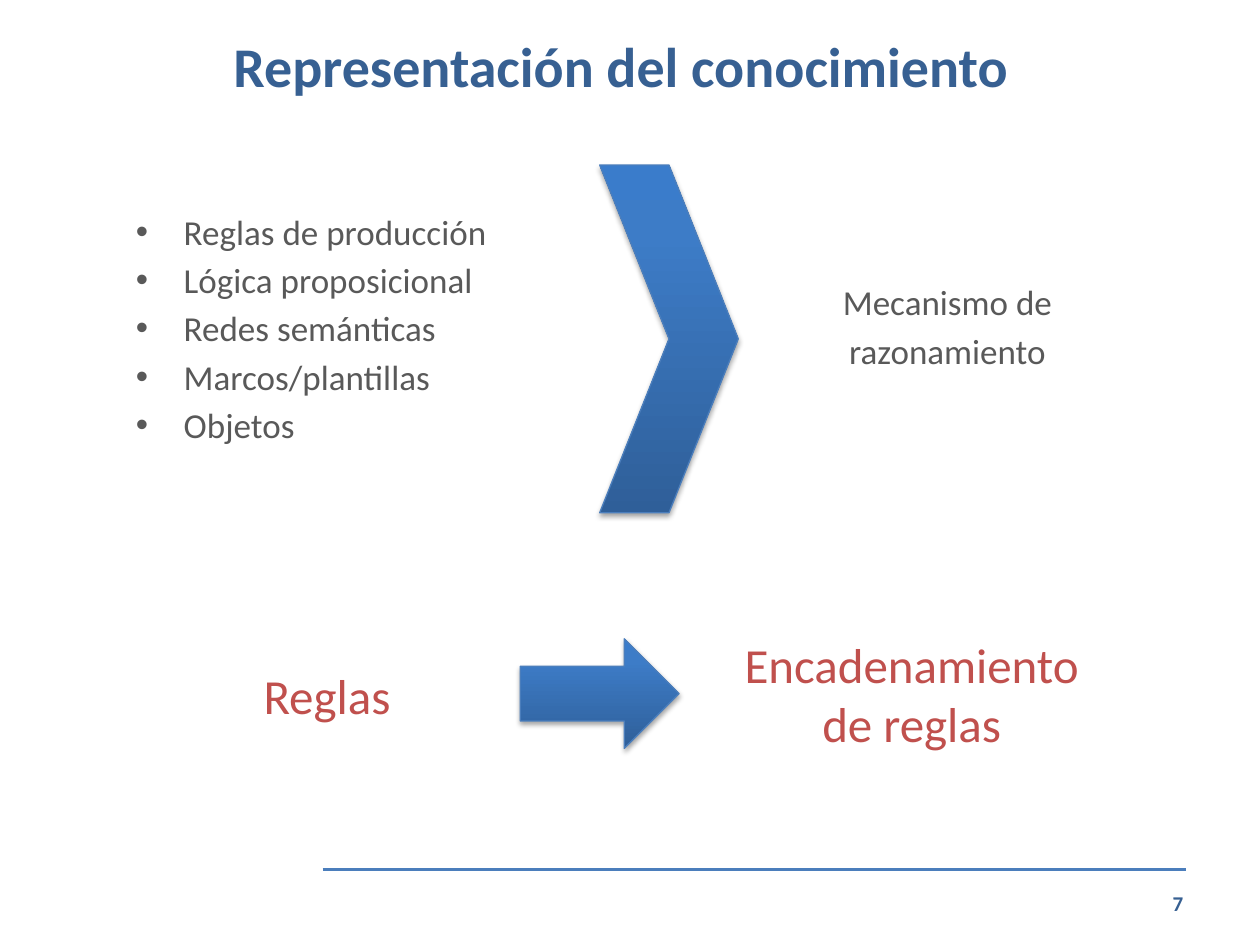
from copy import deepcopy

from lxml import etree
from pptx import Presentation
from pptx.dml.color import RGBColor
from pptx.enum.shapes import MSO_CONNECTOR, MSO_SHAPE
from pptx.enum.text import MSO_ANCHOR, PP_ALIGN
from pptx.oxml.ns import qn
from pptx.util import Emu, Inches, Pt

LEFT, CENTER, RIGHT = PP_ALIGN.LEFT, PP_ALIGN.CENTER, PP_ALIGN.RIGHT
TOP, MIDDLE = MSO_ANCHOR.TOP, MSO_ANCHOR.MIDDLE
CHEVRON, RIGHT_ARROW = MSO_SHAPE.CHEVRON, MSO_SHAPE.RIGHT_ARROW
STRAIGHT = MSO_CONNECTOR.STRAIGHT

FONT = "Calibri"
NAVY, BLUE, GRAY, RED = "376092", "4B7EBC", "595959", "C0504D"
GRADIENT = [(0, "2F5F99"), (0.8, "3D7CC7"), (1, "3A7CCB")]


def rgb(color):
    return RGBColor.from_string(color)


def add_bullet(paragraph, indent):
    properties = paragraph._p.get_or_add_pPr()
    properties.set("marL", str(Inches(indent)))
    properties.set("indent", str(-Inches(indent)))
    etree.SubElement(properties, qn("a:buFont"), typeface="Arial")
    etree.SubElement(properties, qn("a:buChar"), char="•")


def add_text(slide, box, paragraphs, size, color, align=CENTER, anchor=TOP,
             bold=False, bullets=False, wrap=True, gap=3.6):
    """Each paragraph is a string; a newline in it becomes a line break."""
    frame = slide.shapes.add_textbox(*map(Inches, box)).text_frame
    frame.word_wrap = wrap
    frame.vertical_anchor = anchor
    for index, content in enumerate(paragraphs):
        paragraph = frame.add_paragraph() if index else frame.paragraphs[0]
        paragraph.alignment = align
        if index:
            paragraph.space_before = Pt(gap)
        if bullets:
            add_bullet(paragraph, 0.38)
        for number, line in enumerate(content.split("\n")):
            if number:
                paragraph.add_line_break()
            run = paragraph.add_run()
            run.text = line
            run.font.name = FONT
            run.font.size = Pt(size)
            run.font.bold = bold
            run.font.color.rgb = rgb(color)


def add_shadow(shape):
    shape.shadow.inherit = False
    effects = shape._element.spPr.find(qn("a:effectLst"))
    shadow = etree.SubElement(
        effects, qn("a:outerShdw"), blurRad=str(Pt(3.1)), dist=str(Pt(1.8)),
        dir="5400000", rotWithShape="0")
    black = etree.SubElement(shadow, qn("a:srgbClr"), val="000000")
    etree.SubElement(black, qn("a:alpha"), val="35000")


def add_arrow(slide, kind, box):
    arrow = slide.shapes.add_shape(kind, *map(Inches, box))
    arrow.fill.gradient()
    arrow.fill.gradient_angle = 90
    # The default gradient has two stops; a third is needed
    stops = arrow._element.spPr.find(qn("a:gradFill")).find(qn("a:gsLst"))
    stops.append(deepcopy(stops[-1]))
    for stop, (position, color) in zip(arrow.fill.gradient_stops, GRADIENT):
        stop.position = position
        stop.color.rgb = rgb(color)
    arrow.line.color.rgb = rgb(BLUE)
    arrow.line.width = Pt(0.75)
    add_shadow(arrow)


def add_rule(slide, left, right, y):
    rule = slide.shapes.add_connector(
        STRAIGHT, Inches(left), Inches(y), Inches(right), Inches(y))
    rule.line.color.rgb = rgb(BLUE)
    rule.line.width = Pt(1.5)
    etree.SubElement(rule._element.spPr, qn("a:effectLst"))


def main():
    deck = Presentation()
    deck.slide_width, deck.slide_height = Inches(10), Inches(7.5)
    slide = deck.slides.add_slide(deck.slide_layouts[6])

    # Title and footer
    add_rule(slide, 2.56, 9.41, 6.9)
    add_text(slide, (0.43, 0.13, 9, 0.77), ["Representación del conocimiento"],
             32, NAVY, anchor=MIDDLE, bold=True)
    add_text(slide, (8.74, 6.97, 0.75, 0.4), ["7"], 12, NAVY,
             align=RIGHT, anchor=MIDDLE, bold=True)

    # Representations lead to a reasoning mechanism
    representations = ["Reglas de producción", "Lógica proposicional",
                       "Redes semánticas", "Marcos/plantillas", "Objetos"]
    add_text(slide, (0.98, 1.62, 3.31, 2.13), representations, 20, GRAY,
             align=LEFT, bullets=True)
    add_arrow(slide, CHEVRON, (4.76, 1.31, 1.1, 2.76))
    add_text(slide, (6.18, 2.18, 2.68, 0.94),
             ["Mecanismo de", "razonamiento"], 20, GRAY)

    # Rules lead to rule chaining
    add_text(slide, (1.77, 5.23, 1.65, 0.57), ["Reglas"], 28, RED)
    add_text(slide, (5.79, 4.99, 2.89, 1.04), ["Encadenamiento\nde reglas"],
             28, RED, wrap=False)
    add_arrow(slide, RIGHT_ARROW, (4.13, 5.07, 1.26, 0.87))

    deck.save("out.pptx")


if __name__ == "__main__":
    main()
